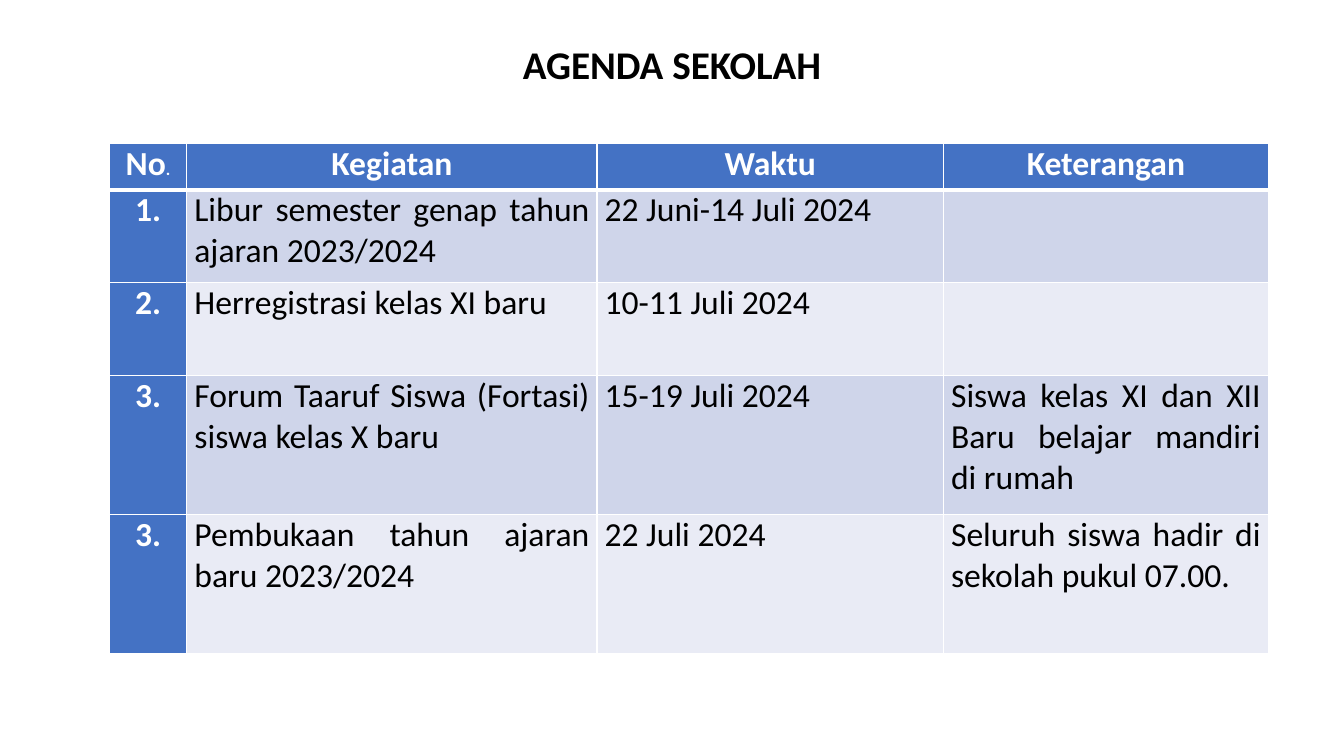
from lxml import etree
from pptx import Presentation
from pptx.dml.color import RGBColor
from pptx.enum import text
from pptx.oxml import ns
from pptx.util import Pt

TITLE = "AGENDA SEKOLAH"
ROWS = [
    ("No", "Kegiatan", "Waktu", "Keterangan"),
    ("1.", "Libur semester genap tahun ajaran 2023/2024",
     "22 Juni-14 Juli 2024", ""),
    ("2.", "Herregistrasi kelas XI baru", "10-11 Juli 2024", ""),
    ("3.", "Forum Taaruf Siswa (Fortasi) siswa kelas X baru",
     "15-19 Juli 2024",
     "Siswa kelas XI dan XII Baru belajar mandiri di rumah"),
    ("3.", "Pembukaan tahun ajaran baru 2023/2024", "22 Juli 2024",
     "Seluruh siswa hadir di sekolah pukul 07.00."),
]
WIDTHS = [55.5, 293, 247.5, 232]
HEIGHTS = [33.2, 66.4, 66.4, 99.4, 99.4]
BLUE, WHITE, BLACK = "4472C4", "FFFFFF", "000000"
BANDS = ["E9EBF5", "CFD5EA"]
ALIGN = text.PP_ALIGN


def color(code):
    return RGBColor.from_string(code)


def style(item, values):
    """Set each named attribute of item."""
    for name, value in values.items():
        setattr(item, name, value)


def write(para, words, size, ink, bold):
    run = para.add_run()
    run.text = words
    style(run.font, {"name": "Calibri", "size": Pt(size), "bold": bold})
    run.font.color.rgb = color(ink)


def border(cell, row):
    """Draw white cell edges, thick between the header and the body."""
    props = cell._tc.get_or_add_tcPr()
    thick = {"B": row == 0, "T": row == 1}
    for side in "LRTB":
        width = Pt(3 if thick.get(side) else 1)
        line = etree.SubElement(props, ns.qn("a:ln" + side), w=str(width))
        fill = etree.SubElement(line, ns.qn("a:solidFill"))
        etree.SubElement(fill, ns.qn("a:srgbClr"), val=WHITE)


def fill_cell(cell, words, row, col):
    head = row == 0 or col == 0
    border(cell, row)
    cell.fill.solid()
    cell.fill.fore_color.rgb = color(BLUE if head else BANDS[row % 2])
    style(cell, {"margin_left": Pt(5.4), "margin_right": Pt(5.4),
                 "margin_top": 0, "margin_bottom": 0})
    para = cell.text_frame.paragraphs[0]
    para.alignment = ALIGN.CENTER if head else ALIGN.JUSTIFY
    if words:
        write(para, words, 24, WHITE if head else BLACK, head)
    if row == col == 0:
        write(para, ".", 12, WHITE, True)


def main():
    deck = Presentation()
    style(deck, {"slide_width": Pt(960), "slide_height": Pt(540)})
    slide = deck.slides.add_slide(deck.slide_layouts[6])

    table = slide.shapes.add_table(
        len(ROWS), len(WIDTHS), Pt(78), Pt(102.4),
        Pt(sum(WIDTHS)), Pt(sum(HEIGHTS))).table
    for col, width in zip(table.columns, WIDTHS):
        col.width = Pt(width)
    for row, height in zip(table.rows, HEIGHTS):
        row.height = Pt(height)
    for r, row in enumerate(ROWS):
        for c, words in enumerate(row):
            fill_cell(table.cell(r, c), words, r, c)

    box = slide.shapes.add_textbox(Pt(66), Pt(29), Pt(828), Pt(45))
    box.text_frame.word_wrap = True
    para = box.text_frame.paragraphs[0]
    style(para, {"alignment": ALIGN.CENTER, "line_spacing": 0.9})
    write(para, TITLE, 28, BLACK, True)
    deck.save("out.pptx")


if __name__ == "__main__":
    main()
